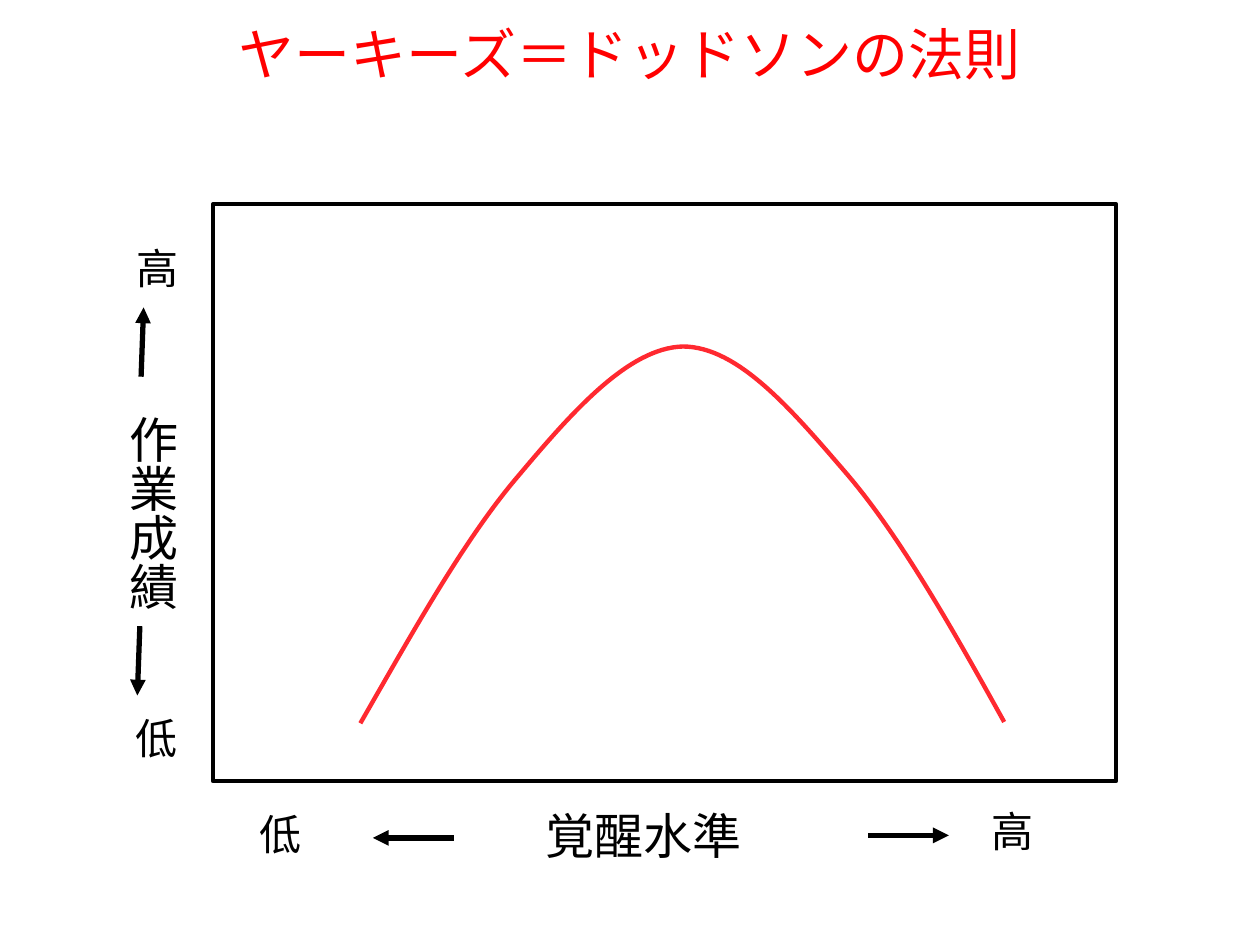
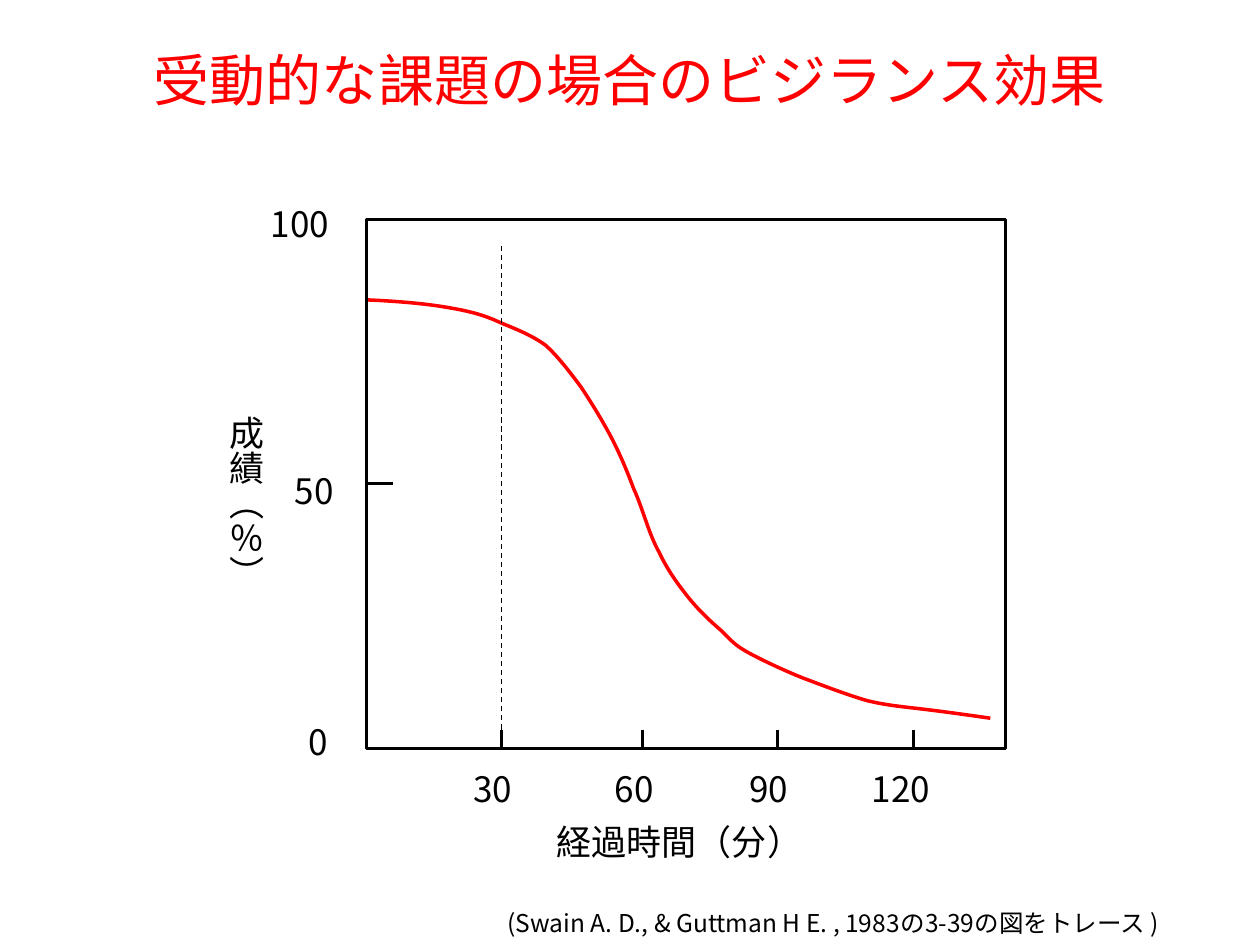
from pptx import Presentation
from pptx import util as u
from pptx.dml.color import RGBColor
from pptx.enum import dml, shapes, text
from pptx.oxml.ns import qn
from lxml import etree

COLORS = {"title": "FF0000", "ink": "000000", "arousal": "FF2930", "vigilance": "FF0000"}
FONT = "Noto Sans CJK JP"
TITLE_ONLY = 5


def lengths(*values):
    return [u.Inches(value) for value in values]


class Board:
    def __init__(self, deck):
        self.deck = deck
        self.page = None
        self.wrap = True

    def new_page(self, title, area, wrap):
        self.page = self.deck.slides.add_slide(self.deck.slide_layouts[TITLE_ONLY])
        self.wrap = wrap
        holder = self.page.shapes.title
        holder.left, holder.top, holder.width, holder.height = lengths(*area)
        holder.text_frame.vertical_anchor = text.MSO_ANCHOR.MIDDLE
        para = holder.text_frame.paragraphs[0]
        para.alignment = text.PP_ALIGN.CENTER
        self.span(para, title, 32, "title")

    def span(self, para, words, size, color="ink"):
        span = para.add_run()
        span.text = words
        span.font.size = u.Pt(size)
        span.font.name = FONT
        span.font.color.rgb = RGBColor.from_string(COLORS[color])
        etree.SubElement(span._r.get_or_add_rPr(), qn("a:ea"), typeface=FONT)

    def label(self, words, area, size, vertical=False):
        box = self.page.shapes.add_textbox(*lengths(*area))
        frame = box.text_frame
        frame.word_wrap = self.wrap
        frame.auto_size = text.MSO_AUTO_SIZE.SHAPE_TO_FIT_TEXT
        if vertical:
            frame._txBody.bodyPr.set("vert", "eaVert")
        self.span(frame.paragraphs[0], words, size)

    def stroke(self, item, width, color="ink"):
        item.line.color.rgb = RGBColor.from_string(COLORS[color])
        item.line.width = u.Pt(width)

    def frame(self, area, width):
        frame = self.page.shapes.add_shape(shapes.MSO_SHAPE.RECTANGLE, *lengths(*area))
        frame.shadow.inherit = False
        frame.fill.background()
        self.stroke(frame, width)
        return frame

    def line(self, start, end, width, arrow=False, dashed=False):
        line = self.page.shapes.add_connector(
            shapes.MSO_CONNECTOR.STRAIGHT, *lengths(*start, *end))
        self.stroke(line, width)
        if dashed:
            line.line.dash_style = dml.MSO_LINE.DASH
        if arrow:
            etree.SubElement(line.line._get_or_add_ln(), qn("a:tailEnd"), type="triangle")
        etree.SubElement(line._element.spPr, qn("a:effectLst"))
        return line

    def curve(self, points, width, color):
        start, *rest = [lengths(*point) for point in points]
        builder = self.page.shapes.build_freeform(*start)
        builder.add_line_segments(rest, close=False)
        curve = builder.convert_to_shape()
        steps = list(curve._element.iter(qn("a:lnTo")))
        for first, second, third in zip(steps[::3], steps[1::3], steps[2::3]):
            bend = etree.Element(qn("a:cubicBezTo"))
            first.addprevious(bend)
            for step in (first, second, third):
                bend.append(step[0])
                step.getparent().remove(step)
        curve.shadow.inherit = False
        curve.fill.background()
        self.stroke(curve, width, color)


def arousal_page(board):
    board.new_page("ヤーキーズ＝ドッドソンの法則", (0.5, 0.1, 9, 0.64), wrap=True)
    board.label("覚醒水準", (4.23, 6.34, 1.94, 0.57), 28)
    board.label("作業成績", (0.82, 3.2, 0.67, 1.79), 28, vertical=True)
    board.frame((1.69, 1.62, 7.17, 4.58), 2.25)
    board.curve([
        (2.86, 5.74),
        (3.28, 5.01), (3.69, 4.27), (4.12, 3.77),
        (4.54, 3.27), (4.99, 2.76), (5.42, 2.75),
        (5.86, 2.75), (6.29, 3.26), (6.72, 3.76),
        (7.14, 4.25), (7.56, 4.99), (7.97, 5.73),
    ], 2.5, "arousal")
    for words, area, vertical in (
        (" 高", (7.7, 6.34, 0.67, 0.5), False),
        ("低", (1.96, 6.37, 0.6, 0.5), False),
        ("高", (0.88, 1.87, 0.61, 0.49), True),
        (" 低", (0.85, 5.52, 0.61, 0.68), True),
    ):
        board.label(words, area, 24, vertical)
    for start, end in (
        ((6.89, 6.63), (7.53, 6.63)),
        ((3.6, 6.65), (2.96, 6.65)),
        ((1.12, 2.99), (1.14, 2.44)),
        ((1.11, 4.97), (1.09, 5.52)),
    ):
        board.line(start, end, 3, arrow=True)


def vigilance_page(board):
    def number(words, left, top):
        board.label(words, (left, top, number_width(words), 0.39), 20)

    def number_width(words):
        return 0.21 + 0.215 * len(words)

    board.new_page("受動的な課題の場合のビジランス効果", (0.75, 0, 8.5, 1.25), wrap=False)
    board.curve([
        (2.91, 2.38),
        (3.15, 2.39), (3.38, 2.41), (3.55, 2.44),
        (3.73, 2.47), (3.84, 2.5), (3.97, 2.56),
        (4.09, 2.61), (4.22, 2.66), (4.33, 2.74),
        (4.43, 2.83), (4.52, 2.95), (4.61, 3.07),
        (4.69, 3.19), (4.77, 3.32), (4.84, 3.45),
        (4.91, 3.58), (4.97, 3.72), (5.03, 3.88),
        (5.1, 4.03), (5.15, 4.24), (5.23, 4.38),
        (5.3, 4.53), (5.39, 4.65), (5.47, 4.75),
        (5.56, 4.86), (5.65, 4.94), (5.73, 5.01),
        (5.8, 5.08), (5.83, 5.12), (5.94, 5.18),
        (6.05, 5.24), (6.22, 5.32), (6.37, 5.38),
        (6.53, 5.44), (6.71, 5.51), (6.88, 5.56),
        (7.04, 5.6), (7.18, 5.61), (7.34, 5.63),
        (7.51, 5.65), (7.86, 5.7), (7.86, 5.7),
    ], 2, "vigilance")
    plot = board.frame((2.91, 1.74, 5.07, 4.2), 1.5)
    for minutes, x in (("30", 3.98), ("60", 5.1), ("90", 6.17), ("120", 7.25)):
        board.line((x, 5.79), (x, 5.94), 1.5)
        number(minutes, x - number_width(minutes) / 2, 6.04)
    for percent, left, top in (("0", 2.35, 5.67), ("50", 2.24, 3.68), ("100", 2.05, 1.56)):
        number(percent, left, top)
    board.label("経過時間（分）", (4.32, 6.46, 2.25, 0.39), 20)
    board.label("成績（％）", (1.61, 3.2, 0.56, 1.34), 20, vertical=True)
    board.line((3.98, 5.79), (3.98, 1.95), 0.75, dashed=True)
    half_tick = board.line((3.12, 3.84), (2.91, 3.84), 1.5)
    half_tick.end_connect(plot, 1)
    board.label("(Swain A. D., & Guttman H E. , 1983の3-39の図をトレース )",
                (3.93, 7.16, 6.08, 0.34), 14)


def main():
    deck = Presentation()
    deck.slide_width, deck.slide_height = lengths(10, 7.5)
    board = Board(deck)
    arousal_page(board)
    vigilance_page(board)
    deck.save("out.pptx")


if __name__ == "__main__":
    main()
